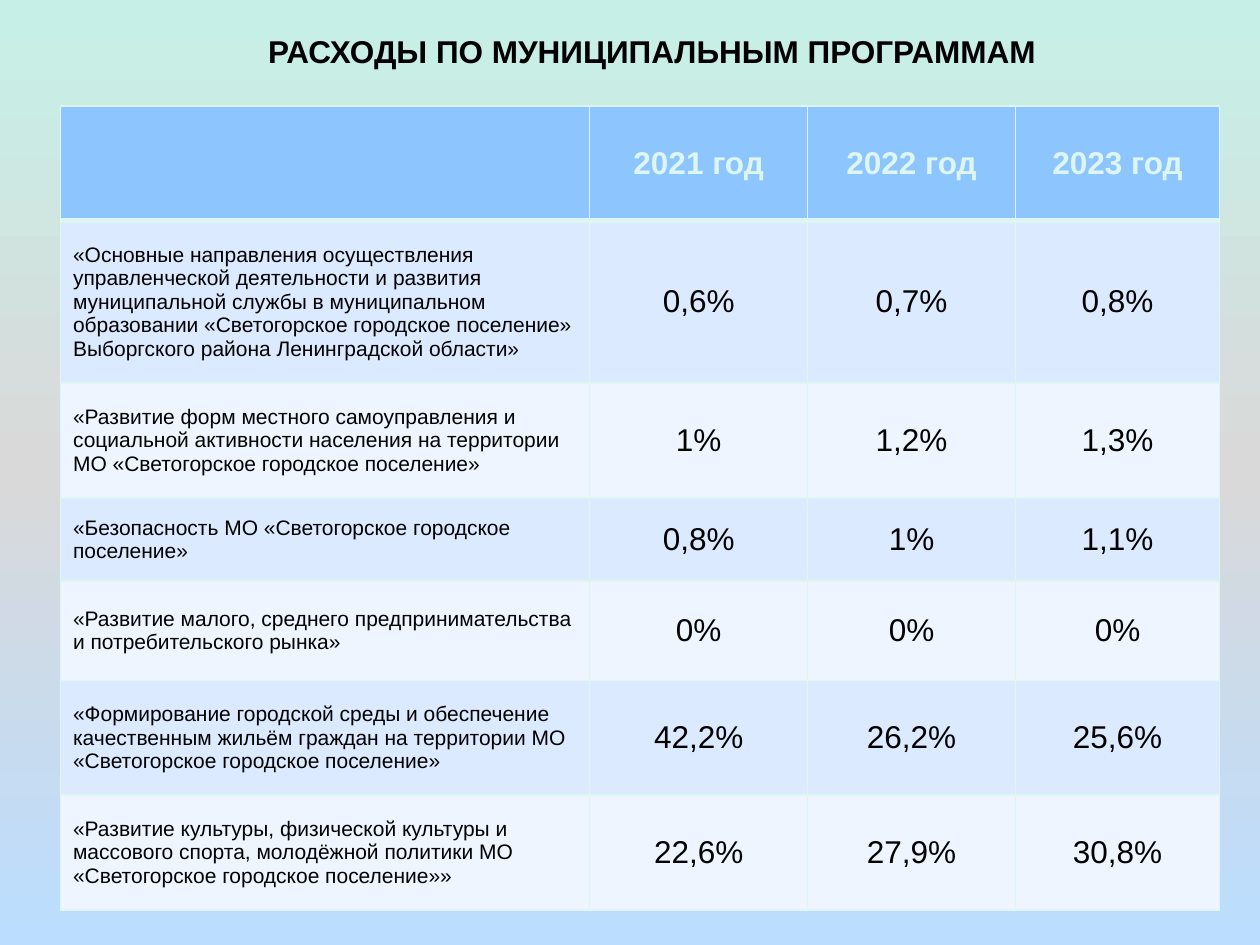
from copy import deepcopy

from lxml import etree
from pptx import Presentation
from pptx import util as u
from pptx.dml.color import RGBColor
from pptx.enum import text
from pptx.oxml.ns import qn

SLIDE_W, SLIDE_H = u.Inches(10), u.Inches(7.5)
FONT = "Arial"
BLACK = RGBColor(0x00, 0x00, 0x00)
PALE_MINT = RGBColor(0xDE, 0xF6, 0xF1)
HEADER_BLUE = RGBColor(0x8D, 0xC6, 0xFF)
BANDS = [RGBColor(0xDB, 0xEA, 0xFF), RGBColor(0xEE, 0xF5, 0xFF)]
BACKDROP = [RGBColor(0xC6, 0xF0, 0xE7), RGBColor(0xD9, 0xD9, 0xD9), RGBColor(0xBB, 0xDD, 0xFF)]

# Boxes are left, top, width, height as shares of the slide
TITLE_BOX = (0.098, 0.028, 0.839, 0.052)
TABLE_BOX = (0.048, 0.112, 0.92, 0.851)
COLUMN_PARTS = [4.2, 1.73, 1.65, 1.62]
ROW_PARTS = [0.91, 1.29, 0.91, 0.66, 0.79, 0.91, 0.91]

HEADER_FORMAT = {"size": u.Pt(18), "bold": True, "name": FONT}
PROGRAM_FORMAT = {"size": u.Pt(12), "bold": False, "name": FONT}
SHARE_FORMAT = {"size": u.Pt(18), "bold": False, "name": FONT}

TITLE = "РАСХОДЫ ПО МУНИЦИПАЛЬНЫМ ПРОГРАММАМ"
EXPENSES = [
    ("", "2021 год", "2022 год", "2023 год"),
    ("«Основные направления осуществления управленческой деятельности и развития "
     "муниципальной службы в муниципальном образовании «Светогорское городское "
     "поселение» Выборгского района Ленинградской области»", "0,6%", "0,7%", "0,8%"),
    ("«Развитие форм местного самоуправления и социальной активности населения "
     "на территории МО «Светогорское городское поселение»", "1%", "1,2%", "1,3%"),
    ("«Безопасность МО «Светогорское городское поселение»", "0,8%", "1%", "1,1%"),
    ("«Развитие малого, среднего предпринимательства и потребительского рынка»",
     "0%", "0%", "0%"),
    ("«Формирование городской среды и обеспечение качественным жильём граждан "
     "на территории МО «Светогорское городское поселение»", "42,2%", "26,2%", "25,6%"),
    ("«Развитие культуры, физической культуры и массового спорта, молодёжной "
     "политики МО «Светогорское городское поселение»»", "22,6%", "27,9%", "30,8%"),
]


def to_slide(box):
    """Turn shares of the slide into lengths."""
    return [round(share * side) for share, side in zip(box, (SLIDE_W, SLIDE_H) * 2)]


def write(paragraph, wording, font_format, color, align):
    paragraph.text = wording
    paragraph.alignment = align
    for key, value in font_format.items():
        setattr(paragraph.font, key, value)
    paragraph.font.color.rgb = color


def paint_background(slide):
    fill = slide.background.fill
    fill.gradient()
    fill.gradient_angle = 270
    stop_list = next(slide.element.iter(qn("a:gsLst")))
    stop_list.append(deepcopy(stop_list[-1]))
    for index, (stop, color) in enumerate(zip(fill.gradient_stops, BACKDROP)):
        stop.color.rgb = color
        stop.position = index / 2


def add_title(slide, box):
    frame = slide.shapes.add_textbox(*to_slide(box)).text_frame
    frame.word_wrap = True
    frame.vertical_anchor = text.MSO_ANCHOR.MIDDLE
    write(frame.paragraphs[0], TITLE, HEADER_FORMAT, BLACK, text.PP_ALIGN.CENTER)


def set_borders(cell, bottom_width):
    """Border elements have to stand ahead of the cell's fill."""
    properties = cell._tc.get_or_add_tcPr()
    widths = {"lnL": 1, "lnR": 1, "lnT": 1, "lnB": bottom_width}
    for position, (side, width) in enumerate(widths.items()):
        line = etree.Element(qn(f"a:{side}"), w=str(u.Pt(width)))
        solid = etree.SubElement(line, qn("a:solidFill"))
        etree.SubElement(solid, qn("a:srgbClr"), val=str(PALE_MINT))
        properties.insert(position, line)


def add_expense_table(slide, box):
    left, top, width, height = to_slide(box)
    table = slide.shapes.add_table(
        len(EXPENSES), len(COLUMN_PARTS), left, top, width, height).table
    for column, part in zip(table.columns, COLUMN_PARTS):
        column.width = round(width * part / sum(COLUMN_PARTS))
    for row, part in zip(table.rows, ROW_PARTS):
        row.height = round(height * part / sum(ROW_PARTS))

    for r, entries in enumerate(EXPENSES):
        is_header = r == 0
        for c, entry in enumerate(entries):
            cell = table.cell(r, c)
            cell.vertical_anchor = text.MSO_ANCHOR.MIDDLE
            cell.fill.solid()
            cell.fill.fore_color.rgb = HEADER_BLUE if is_header else BANDS[(r - 1) % 2]
            set_borders(cell, 3 if is_header else 1)
            body_format = SHARE_FORMAT if c else PROGRAM_FORMAT
            write(cell.text_frame.paragraphs[0], entry,
                  HEADER_FORMAT if is_header else body_format,
                  PALE_MINT if is_header else BLACK,
                  text.PP_ALIGN.CENTER if c else text.PP_ALIGN.LEFT)


def main():
    deck = Presentation()
    deck.slide_width, deck.slide_height = SLIDE_W, SLIDE_H
    slide = deck.slides.add_slide(deck.slide_layouts[6])
    paint_background(slide)
    add_title(slide, TITLE_BOX)
    add_expense_table(slide, TABLE_BOX)
    deck.save("out.pptx")


if __name__ == "__main__":
    main()
